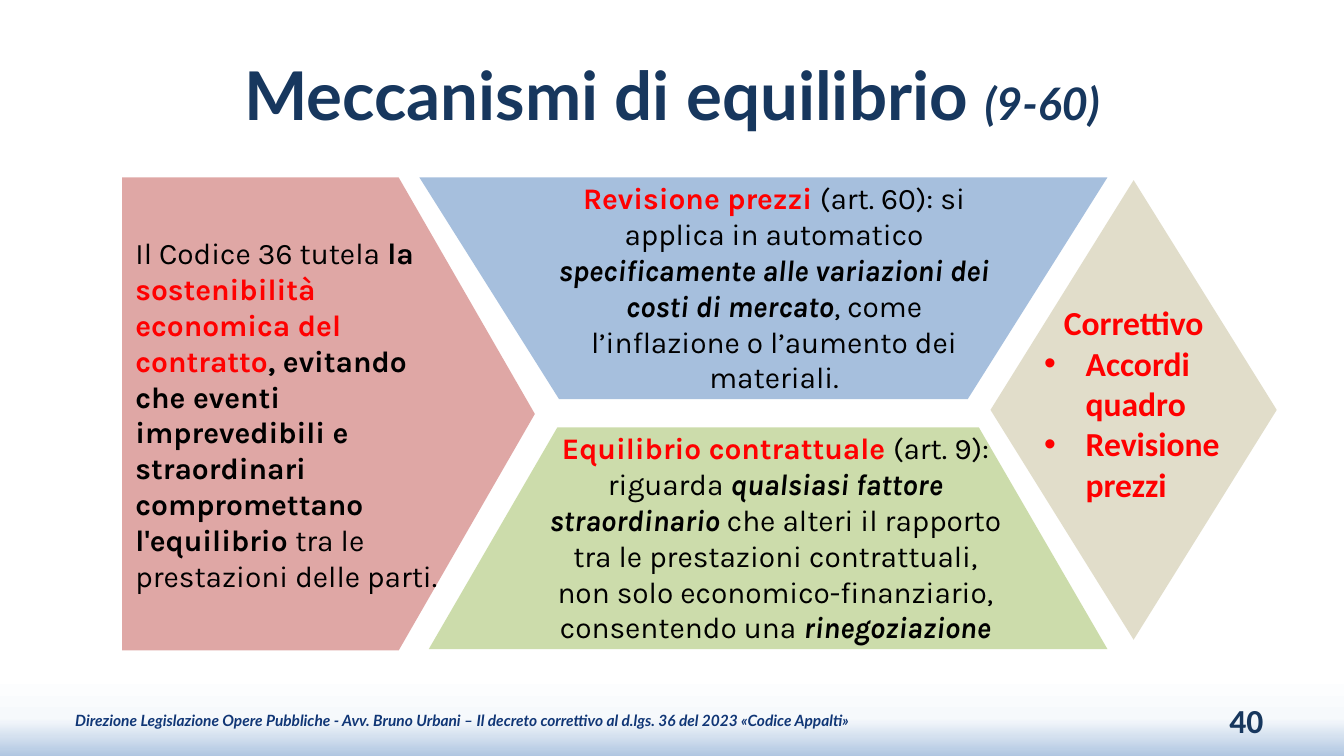
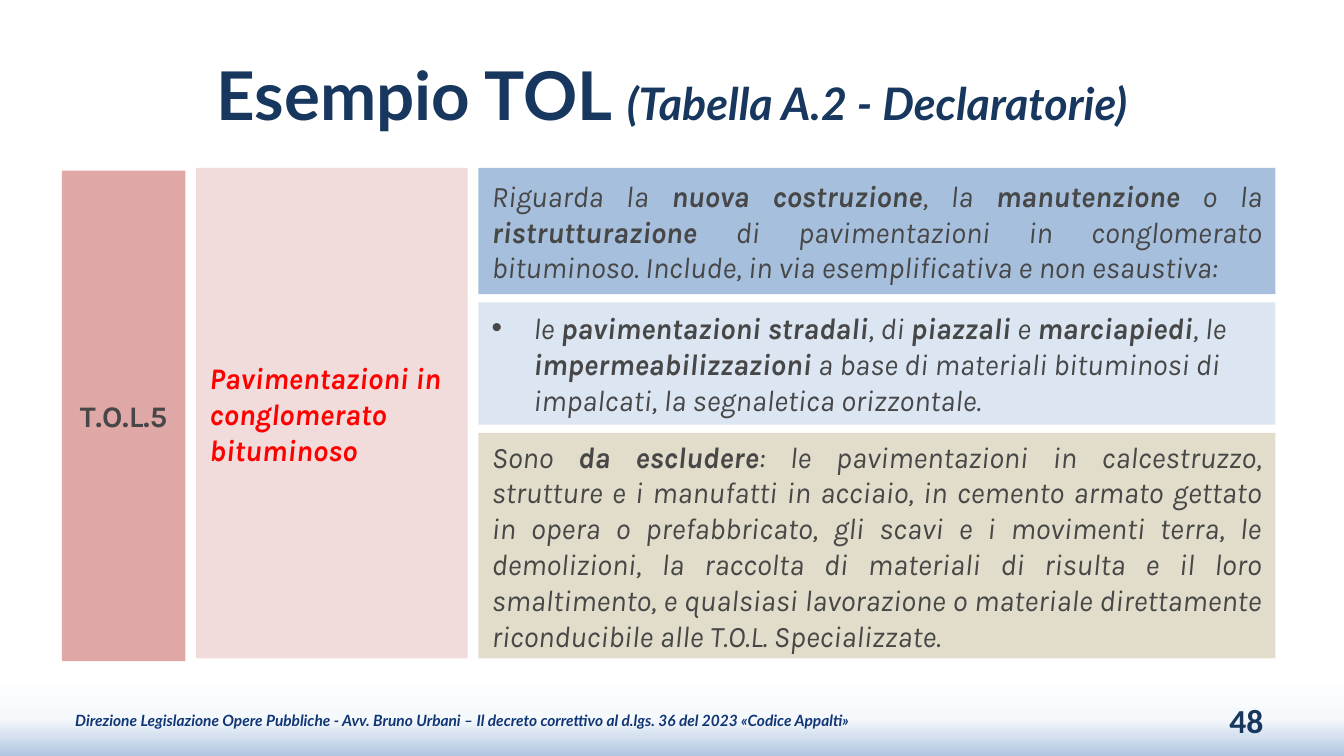
"""Build two slides on contract balance and works categories."""
from lxml import etree
from pptx import Presentation
from pptx.dml.color import RGBColor
from pptx.enum.shapes import MSO_SHAPE as Shape
from pptx.enum.text import MSO_ANCHOR as Anchor, MSO_AUTO_SIZE as Auto, PP_ALIGN as Align
from pptx.oxml.ns import qn
from pptx.util import Inches, Pt

HUES = {
    "navy": "17375E", "foot": "103676", "black": "000000", "gray": "474747",
    "red": "FF0000", "rose": "C0504D", "pink": "E6B9B8", "blue": "4F81BD",
    "pale": "DCE6F2", "green": "9BBB59", "sand": "C4BD97",
}
FADE = [(89, "FFFFFF"), (95, "F6F9FC"), (100, "B0C6E1")]
FOOT = ("Direzione Legislazione Opere Pubbliche - Avv. Bruno Urbani – "
        "Il decreto correttivo al d.lgs. 36 del 2023 «Codice Appalti»")

GOAL = [("Il Codice 36 tutela ", ""), ("la ", "b"),
        ("sostenibilità economica del contratto", "br"),
        (", evitando che eventi imprevedibili e straordinari compromettano l'equilibrio ", "b"),
        ("tra le prestazioni delle parti.", "")]
PRICE = [("Revisione prezzi ", "br"), ("(art. 60): si applica in automatico ", ""),
         ("specificamente alle variazioni dei costi di mercato", "bi"),
         (", come l’inflazione o l’aumento dei materiali.", "")]
TERMS = [("Equilibrio contrattuale ", "br"), ("(art. 9): riguarda ", ""),
         ("qualsiasi fattore straordinario ", "bi"),
         ("che alteri il rapporto tra le prestazioni contrattuali, "
          "non solo economico-finanziario, consentendo una ", ""),
         ("rinegoziazione", "bi")]
FIXES = ["Accordi quadro", "Revisione prezzi"]

CODE = [("T.O.L.5", "b")]
NAME = [("Pavimentazioni in conglomerato bituminoso", "bir")]
SCOPE = [("Riguarda la ", "i"), ("nuova costruzione", "bi"), (", la ", "i"),
         ("manutenzione", "bi"), (" o la ", "i"), ("ristrutturazione", "bi"),
         (" di pavimentazioni in conglomerato bituminoso. "
          "Include, in via esemplificativa e non esaustiva:", "i")]
ITEMS = [("le ", "i"), ("pavimentazioni stradali", "bi"), (", di ", "i"),
         ("piazzali", "bi"), (" e ", "i"), ("marciapiedi", "bi"), (", le ", "i"),
         ("impermeabilizzazioni", "bi"),
         (" a base di materiali bituminosi di impalcati, la segnaletica orizzontale.", "i")]
OUT = [("Sono ", "i"), ("da escludere", "bi"),
       (": le pavimentazioni in calcestruzzo, strutture e i manufatti in acciaio, "
        "in cemento armato gettato in opera o prefabbricato, gli scavi e i movimenti terra, "
        "le demolizioni, la raccolta di materiali di risulta e il loro smaltimento, "
        "e qualsiasi lavorazione o materiale direttamente riconducibile alle "
        "T.O.L. Specializzate.", "i")]
ROWS = [(0.94, "blue", SCOPE, {"align": Align.JUSTIFY}),
        (0.91, "pale", ITEMS, {"dot": True, "clear": False}),
        (1.68, "sand", OUT, {"align": Align.JUSTIFY})]


def color(name):
    return RGBColor.from_string(HUES[name])


def write(para, runs, size=16, font="Karla", ink="black", align=Align.LEFT, dot=False):
    para.alignment = align
    if dot:
        props = para._p.get_or_add_pPr()
        props.set("marL", str(Inches(0.31)))
        props.set("indent", str(-Inches(0.31)))
        etree.SubElement(props, qn("a:buFont"), typeface="Arial")
        etree.SubElement(props, qn("a:buChar"), char="•")
    for text, marks, *own in runs:
        run = para.add_run()
        run.text = text
        face = run.font
        face.name, face.size = font, Pt(own[0] if own else size)
        face.bold, face.italic = "b" in marks, "i" in marks
        face.color.rgb = color("red" if "r" in marks else ink)


def setup(frame, anchor):
    frame.word_wrap, frame.auto_size = True, Auto.NONE
    frame.vertical_anchor = anchor
    return frame


def label(slide, box, runs, anchor=Anchor.TOP, **style):
    frame = setup(slide.shapes.add_textbox(*map(Inches, box)).text_frame, anchor)
    write(frame.paragraphs[0], runs, **style)
    return frame


def block(slide, kind, box, hue, runs=(), adj=None, flip=False, clear=True, **style):
    shape = slide.shapes.add_shape(kind, *map(Inches, box))
    shape.shadow.inherit = False
    shape.fill.solid()
    shape.fill.fore_color.rgb = color(hue)
    shape.line.fill.background()
    props = shape._element.spPr
    if clear:
        tint = props.find(qn("a:solidFill"))[0]
        etree.SubElement(tint, qn("a:alpha"), val="50000")
    if adj:
        shape.adjustments[0] = adj
    if flip:
        props.find(qn("a:xfrm")).set("flipV", "1")
    if runs:
        write(setup(shape.text_frame, Anchor.MIDDLE).paragraphs[0], runs, **style)


def backdrop(master):
    fill = master.background.fill
    fill.gradient()
    fill.gradient_angle = 270
    stops = next(master._element.iter(qn("a:gsLst")))
    for stop in list(stops):
        stops.remove(stop)
    for spot, hue in FADE:
        stop = etree.SubElement(stops, qn("a:gs"), pos=str(spot * 1000))
        etree.SubElement(stop, qn("a:srgbClr"), val=hue)


def start(deck, head, note, page):
    slide = deck.slides.add_slide(deck.slide_layouts[5])
    title = slide.shapes.title
    title.left, title.top, title.width, title.height = map(Inches, (0.5, 0.23, 9, 0.94))
    write(setup(title.text_frame, Anchor.MIDDLE).paragraphs[0],
          [(head, "b"), (note, "bi", 24)],
          size=36, font="Lato", ink="navy", align=Align.CENTER)
    label(slide, (7.17, 5.21, 2.33, 0.3), [(page, "b")], Anchor.MIDDLE,
          size=18, font="Calibri", ink="navy", align=Align.RIGHT)
    foot = label(slide, (0.49, 5.21, 6, 0.3), [(FOOT, "bi")], Anchor.MIDDLE,
                 size=8.3, font="Lato", ink="foot")
    foot.margin_left = foot.margin_right = Inches(0.07)
    foot.margin_top = foot.margin_bottom = Inches(0.04)
    return slide


def balance(deck):
    slide = start(deck, "Meccanismi di equilibrio ", "(9-60)", "40")
    block(slide, Shape.PENTAGON, (0.91, 1.32, 3.07, 3.52), "rose", GOAL, adj=0.33)
    block(slide, Shape.TRAPEZOID, (3.12, 1.32, 5.12, 1.65), "blue", adj=0.63, flip=True)
    block(slide, Shape.TRAPEZOID, (3.19, 3.18, 5.05, 1.65), "green", adj=0.58)
    label(slide, (3.96, 3.15, 3.62, 1.72), TERMS, align=Align.CENTER)
    block(slide, Shape.DIAMOND, (7.37, 1.34, 2.13, 3.42), "sand")
    look = {"size": 18, "font": "Calibri"}
    frame = label(slide, (7.67, 2.2, 1.53, 2.22), [("Correttivo", "br")],
                  align=Align.CENTER, **look)
    for text in FIXES:
        write(frame.add_paragraph(), [(text, "br")], dot=True, **look)
    label(slide, (4.01, 1.29, 3.5, 1.72), PRICE, align=Align.CENTER)


def works(deck):
    slide = start(deck, "Esempio TOL ", "(Tabella A.2 - Declaratorie)", "48")
    top, gap = 1.25, 0.06
    cells = [((0.46, 1.27, 0.92, 3.65), "rose", CODE, {"align": Align.CENTER}),
             ((1.46, top, 2.02, 3.65), "pink", NAME, {})]
    for high, hue, runs, style in ROWS:
        cells.append(((3.56, top, 5.93, high), hue, runs, style))
        top += high + gap
    for box, hue, runs, style in cells:
        block(slide, Shape.RECTANGLE, box, hue, runs, ink="gray", **style)


def main():
    deck = Presentation()
    deck.slide_width = Inches(10)
    deck.slide_height = deck.slide_width * 9 // 16
    backdrop(deck.slide_master)
    balance(deck)
    works(deck)
    deck.save("out.pptx")


if __name__ == "__main__":
    main()
